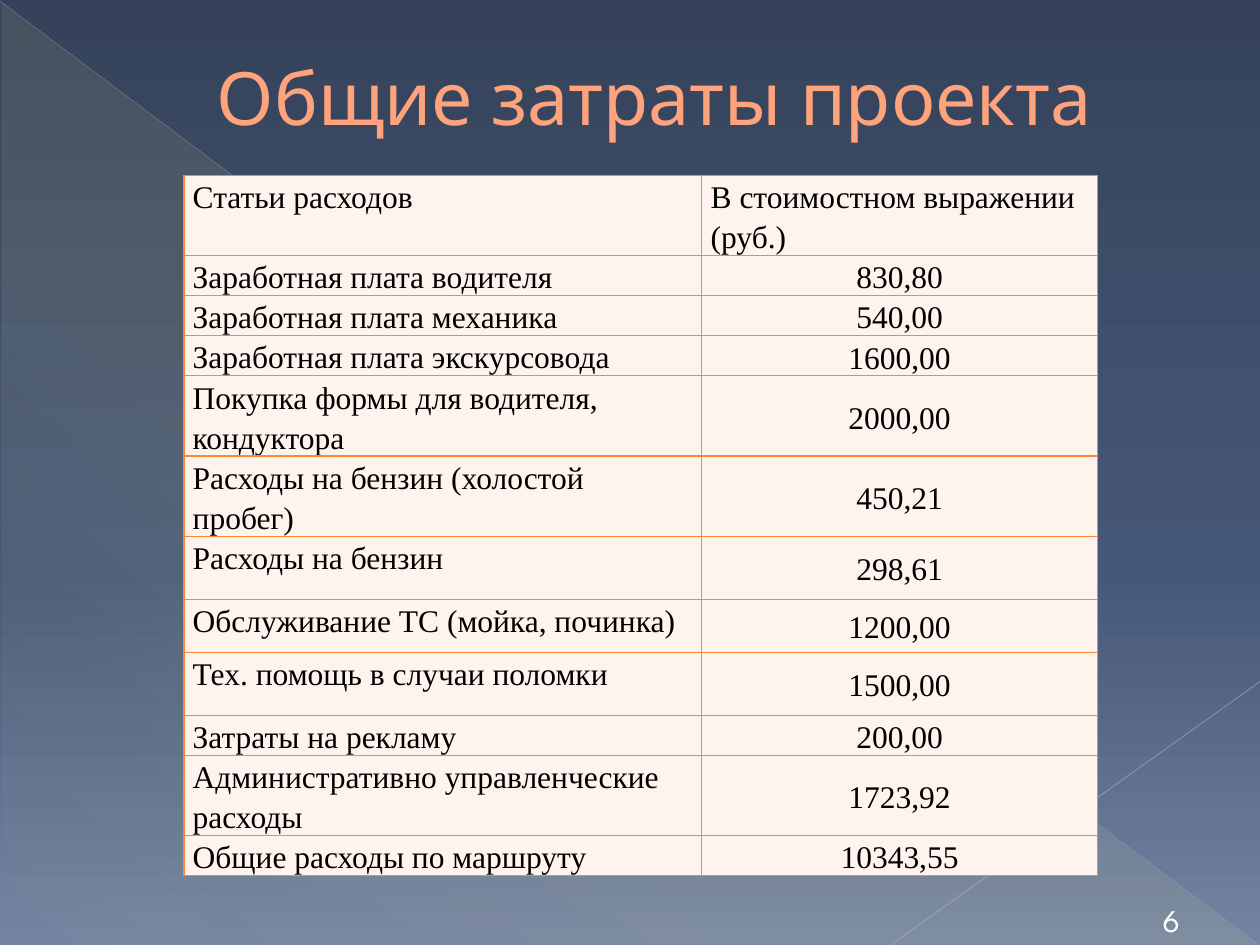
from dataclasses import dataclass

from lxml.etree import SubElement
from pptx import Presentation
from pptx.dml.color import RGBColor
from pptx.enum.shapes import MSO_CONNECTOR as Connector, MSO_SHAPE as Shape
from pptx.enum.text import MSO_ANCHOR as Anchor, MSO_AUTO_SIZE as AutoSize, PP_ALIGN as Align
from pptx.oxml.ns import qn
from pptx.util import Inches, Pt

# The slide is a grid of 100 columns by 75 rows
COLUMNS, ROWS = 100, 75
UNIT = Inches(10) // COLUMNS
HEADING_FONT, TABLE_FONT = "League Spartan", "Times New Roman"
ORANGE, CELL_FILL = "FF8636", "FFF3ED"

# Label, value, row height in grid rows
COSTS = [
    ("Статьи расходов", "В стоимостном выражении (руб.)", 5.3),
    ("Заработная плата водителя", "830,80", 2.6),
    ("Заработная плата механика", "540,00", 2.6),
    ("Заработная плата экскурсовода", "1600,00", 2.6),
    ("Покупка формы для водителя, кондуктора", "2000,00", 5.3),
    ("Расходы на бензин (холостой пробег)", "450,21", 5.3),
    ("Расходы на бензин", "298,61", 5),
    ("Обслуживание ТС (мойка, починка)", "1200,00", 4.2),
    ("Тех. помощь в случаи поломки", "1500,00", 5),
    ("Затраты на рекламу", "200,00", 2.6),
    ("Административно управленческие расходы", "1723,92", 5.3),
    ("Общие расходы по маршруту", "10343,55", 2.6),
]


@dataclass
class Box:
    left: float
    top: float
    width: float
    height: float

    def place(self):
        return [grid(value) for value in (self.left, self.top, self.width, self.height)]


def grid(value):
    return round(value * UNIT)


def color(value):
    return RGBColor.from_string(value)


def write(frame, text, *, size, font, fill, align=Align.LEFT, anchor=None, spacing=None):
    if anchor is not None:
        frame.vertical_anchor = anchor
    paragraph = frame.paragraphs[0]
    paragraph.alignment = align
    paragraph.line_spacing = spacing
    run = paragraph.add_run()
    run.text = text
    run.font.size, run.font.name = Pt(size), font
    run.font.color.rgb = color(fill)
    return paragraph


def add_alpha(parent, percent):
    SubElement(parent, qn("a:alpha"), val=str(percent * 1000))


def set_gradient(fill, stops, angle):
    """Stops are (position, colour, opacity), all but the colour in percent."""
    fill.gradient()
    fill.gradient_angle = 360 - angle
    stop_list = fill.gradient_stops[0]._gs.getparent()
    for old in list(stop_list):
        stop_list.remove(old)
    for position, value, opacity in stops:
        stop = SubElement(stop_list, qn("a:gs"), pos=str(position * 1000))
        add_alpha(SubElement(stop, qn("a:srgbClr"), val=value), opacity)


def add_thin_line(slide, start, end, value, width, opacity):
    points = [grid(number) for number in (*start, *end)]
    line = slide.shapes.add_connector(Connector.STRAIGHT, *points)
    line.line.width = Pt(width)
    line.line.color.rgb = color(value)
    properties = line._element.spPr
    add_alpha(properties.find(".//" + qn("a:srgbClr")), opacity)
    SubElement(properties, qn("a:effectLst"))


def add_backdrop(slide, box):
    set_gradient(slide.background.fill,
                 [(0, "35425A", 100), (60, "465877", 100), (100, "7383A2", 100)], 90)
    triangle = slide.shapes.add_shape(Shape.RIGHT_TRIANGLE, *box.place())
    triangle.shadow.inherit = False
    triangle.line.fill.background()
    set_gradient(triangle.fill,
                 [(0, "FFF39D", 10), (70, "FFF39D", 8), (100, "FFF39D", 1)], 133)
    right, bottom = box.left + box.width, box.top + box.height
    add_thin_line(slide, (0, 0.1), (right, bottom), "BABDC4", 0.39, 35)
    add_thin_line(slide, (COLUMNS, 54.1), (70.7, bottom), "C1C4CA", 0.47, 45)


def add_title(slide, box, text):
    title = slide.shapes.title
    title.left, title.top, title.width, title.height = box.place()
    title.text_frame.auto_size = AutoSize.NONE
    paragraph = write(title.text_frame, text, size=42, font=HEADING_FONT, fill="FFA37C",
                      align=Align.CENTER, anchor=Anchor.MIDDLE)
    indent = paragraph._p.get_or_add_pPr()
    indent.set("marL", str(grid(5.3)))
    indent.set("indent", "0")


def add_borders(cell):
    properties = cell._tc.get_or_add_tcPr()
    for index, side in enumerate(("lnL", "lnR", "lnT", "lnB")):
        border = SubElement(properties, qn("a:" + side), w=str(Pt(0.75)))
        SubElement(SubElement(border, qn("a:solidFill")), qn("a:srgbClr"), val=ORANGE)
        properties.insert(index, border)


def add_cost_table(slide, box, costs):
    table = slide.shapes.add_table(len(costs), 2, *box.place()).table
    table.first_row = table.horz_banding = False
    for column, share in zip(table.columns, (0.567, 0.433)):
        column.width = grid(box.width * share)
    for index, (label, value, height) in enumerate(costs):
        table.rows[index].height = grid(height)
        for position, text in enumerate((label, value)):
            cell = table.cell(index, position)
            centred = index > 0 and position == 1
            cell.margin_left = cell.margin_right = grid(0.7)
            cell.margin_top = cell.margin_bottom = 0
            cell.fill.solid()
            cell.fill.fore_color.rgb = color(CELL_FILL)
            add_borders(cell)
            cell.vertical_anchor = Anchor.MIDDLE if centred else Anchor.TOP
            write(cell.text_frame, text, size=18, font=TABLE_FONT, fill="000000",
                  align=Align.CENTER if centred else Align.LEFT, spacing=1.15)


def add_page_number(slide, box, number):
    frame = slide.shapes.add_textbox(*box.place()).text_frame
    frame.word_wrap = True
    write(frame, number, size=18, font=HEADING_FONT, fill="FFFFFF",
          align=Align.CENTER, anchor=Anchor.BOTTOM)


def main():
    presentation = Presentation()
    presentation.slide_width, presentation.slide_height = grid(COLUMNS), grid(ROWS)
    slide = presentation.slides.add_slide(presentation.slide_layouts[5])
    add_backdrop(slide, Box(0.1, 0.2, 99.8, 74.8))
    add_title(slide, Box(4.3, 0, 90, 15.3), "Общие затраты проекта")
    table_height = sum(height for _, _, height in COSTS)
    add_cost_table(slide, Box(14.6, 13.9, 72.5, table_height), COSTS)
    add_page_number(slide, Box(90.2, 71.7, 5.5, 3.3), "6")
    presentation.save("out.pptx")


if __name__ == "__main__":
    main()
